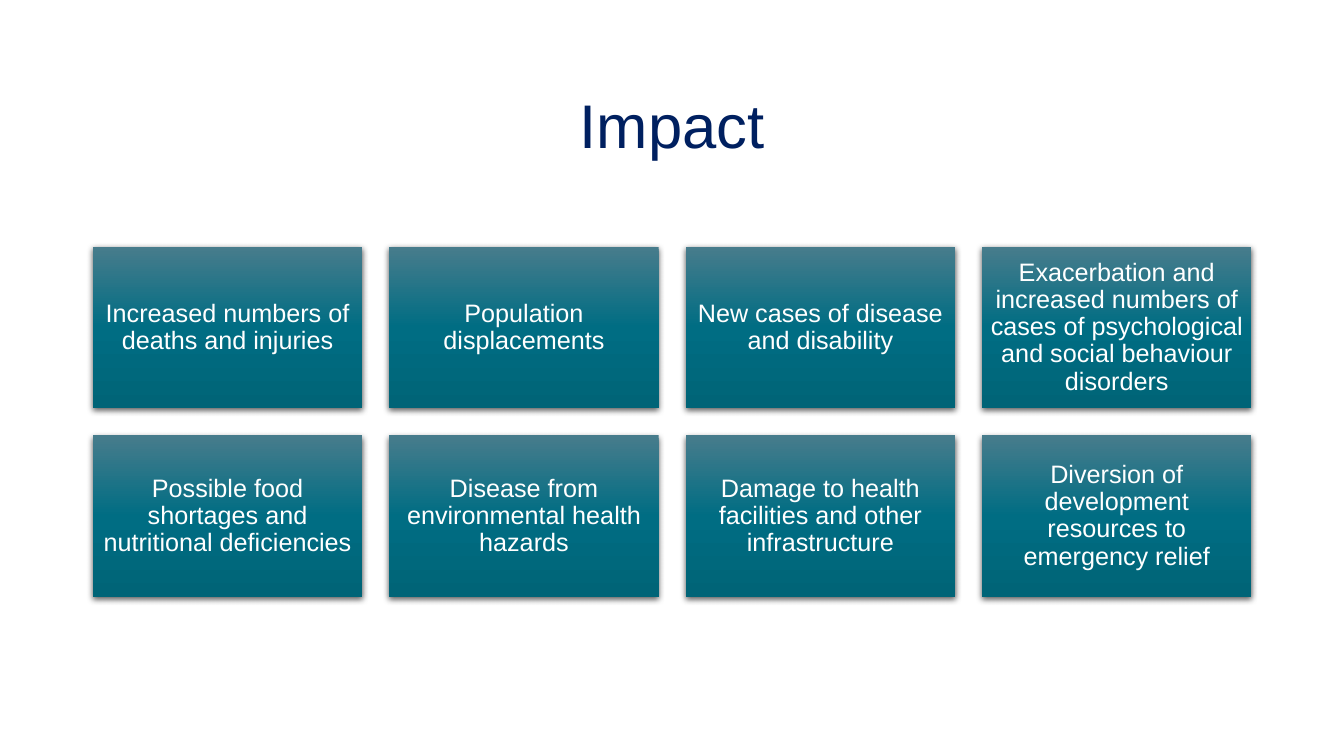
import copy

import lxml.etree
import pptx
import pptx.dml.color
import pptx.enum.shapes
import pptx.enum.text
import pptx.oxml.ns
import pptx.util

Cm, Pt = pptx.util.Cm, pptx.util.Pt
RGBColor = pptx.dml.color.RGBColor
qn = pptx.oxml.ns.qn

NAVY = RGBColor(0x00, 0x20, 0x60)
WHITE = RGBColor(0xFF, 0xFF, 0xFF)
BLACK = RGBColor(0x00, 0x00, 0x00)
TEAL_STOPS = [
    (0, RGBColor(0x47, 0x7C, 0x8C)),
    (0.5, RGBColor(0x00, 0x6D, 0x83)),
    (1, RGBColor(0x00, 0x64, 0x77)),
]

IMPACTS = [
    "Increased numbers of deaths and injuries",
    "Population displacements",
    "New cases of disease and disability",
    "Exacerbation and increased numbers of cases of psychological "
    "and social behaviour disorders",
    "Possible food shortages and nutritional deficiencies",
    "Disease from environmental health hazards",
    "Damage to health facilities and other infrastructure",
    "Diversion of development resources to emergency relief",
]

# Card grid, in centimetres
COLUMNS = 4
LEFT, TOP = 2.34, 6.22
CARD_W, CARD_H = 6.79, 4.07
GAP = 0.68


def write_text(s, text, size, color, inset_x, inset_y):
    tf = s.text_frame
    tf.word_wrap = True
    tf.vertical_anchor = pptx.enum.text.MSO_ANCHOR.MIDDLE
    tf.margin_left = tf.margin_right = Cm(inset_x)
    tf.margin_top = tf.margin_bottom = Cm(inset_y)
    p = tf.paragraphs[0]
    p.text = text
    p.alignment = pptx.enum.text.PP_ALIGN.CENTER
    p.line_spacing = 0.9
    p.font.name = "Arial"
    p.font.size = Pt(size)
    p.font.color.rgb = color


def fill_gradient(s):
    s.fill.gradient()
    s.fill.gradient_angle = 270
    # The default gradient has two stops; add the third
    stop_list = s._element.spPr.find(".//" + qn("a:gsLst"))
    stop_list.append(copy.deepcopy(stop_list[-1]))
    for stop, (position, color) in zip(s.fill.gradient_stops, TEAL_STOPS):
        stop.position = position
        stop.color.rgb = color


def add_shadow(s):
    s.shadow.inherit = False
    effects = s._element.spPr.find(qn("a:effectLst"))
    shadow = lxml.etree.SubElement(
        effects, qn("a:outerShdw"), blurRad=str(Pt(4.5)), dist=str(Pt(1.5)),
        dir="5400000", algn="ctr", rotWithShape="0")
    color = lxml.etree.SubElement(shadow, qn("a:srgbClr"), val=str(BLACK))
    lxml.etree.SubElement(color, qn("a:alpha"), val="63000")


def add_card(slide, left, top, text):
    s = slide.shapes.add_shape(
        pptx.enum.shapes.MSO_SHAPE.RECTANGLE,
        Cm(left), Cm(top), Cm(CARD_W), Cm(CARD_H))
    fill_gradient(s)
    s.line.fill.background()
    add_shadow(s)
    write_text(s, text, 18, WHITE, 0.17, 0.17)


def add_title(slide, text):
    s = slide.shapes.title
    s.left, s.top = Cm(LEFT), Cm(1.8)
    s.width, s.height = Cm(29.21), Cm(2.87)
    write_text(s, text, 44, NAVY, 0.25, 0.13)


def main():
    prs = pptx.Presentation()
    prs.slide_width, prs.slide_height = Cm(33.87), Cm(19.05)
    slide = prs.slides.add_slide(prs.slide_layouts.get_by_name("Title Only"))

    # Heading
    add_title(slide, "Impact")

    # Impact cards, row by row
    for i, text in enumerate(IMPACTS):
        row, column = divmod(i, COLUMNS)
        add_card(slide, LEFT + column * (CARD_W + GAP),
                 TOP + row * (CARD_H + GAP), text)

    prs.save("out.pptx")


if __name__ == "__main__":
    main()
